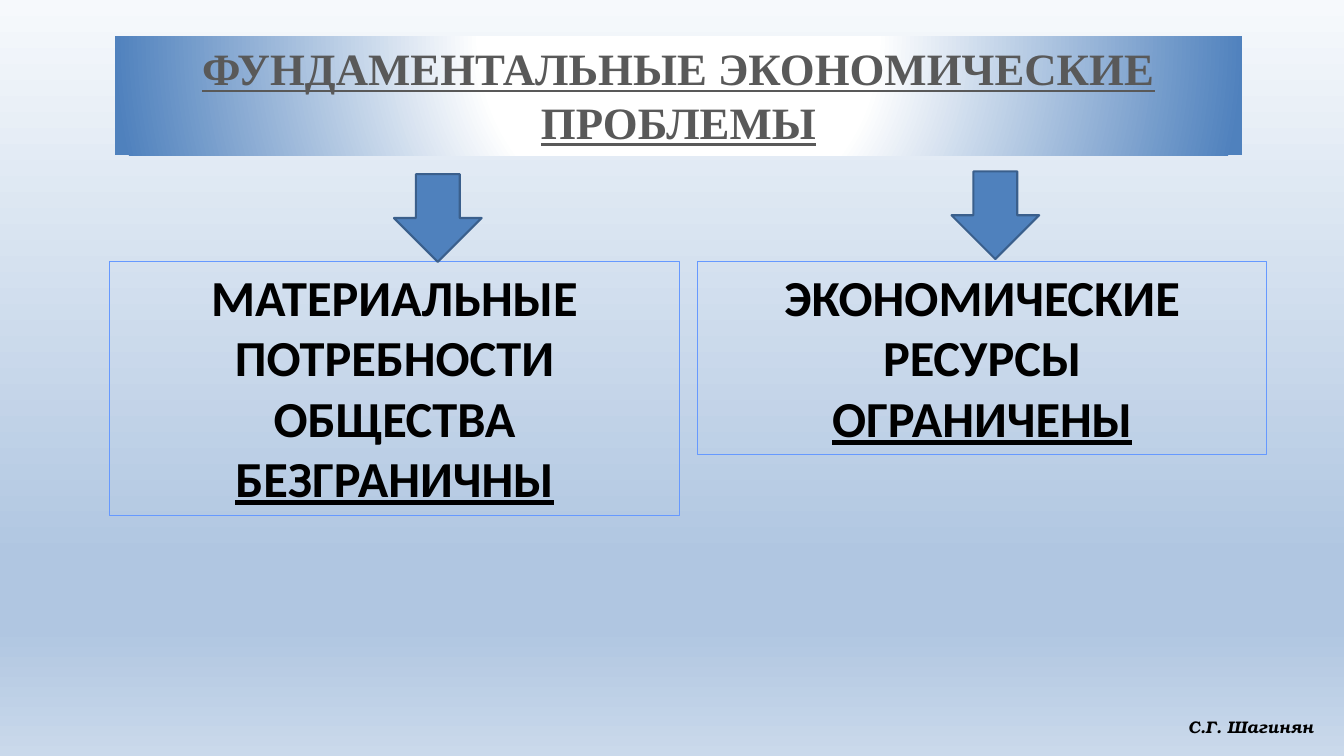
from pptx import Presentation
from pptx.dml.color import RGBColor
from pptx.enum.shapes import MSO_SHAPE
from pptx.enum.text import MSO_ANCHOR, MSO_AUTO_SIZE, PP_ALIGN
from pptx.oxml import parse_xml
from pptx.oxml.ns import nsdecls
from pptx.util import Cm, Pt

RECT, DOWN_ARROW = MSO_SHAPE.RECTANGLE, MSO_SHAPE.DOWN_ARROW
TOP, LEFT, CENTER = MSO_ANCHOR.TOP, PP_ALIGN.LEFT, PP_ALIGN.CENTER
GROW = MSO_AUTO_SIZE.SHAPE_TO_FIT_TEXT

BLACK = RGBColor(0x00, 0x00, 0x00)
GREY = RGBColor(0x59, 0x59, 0x59)
WHITE = RGBColor(0xFF, 0xFF, 0xFF)
BLUE = RGBColor(0x4F, 0x81, 0xBD)
DARK_BLUE = RGBColor(0x3A, 0x5F, 0x8C)
BOX_BLUE = RGBColor(0x66, 0x99, 0xFF)
SKY_TOP = RGBColor(0xF6, 0xF9, 0xFC)
SKY_MID = RGBColor(0xB0, 0xC6, 0xE1)
SKY_END = RGBColor(0xCA, 0xD9, 0xEB)

VERTICAL = '<a:lin ang="5400000" scaled="0"/>'
RADIAL = ('<a:path path="circle"><a:fillToRect l="50000" t="-80000" '
          'r="50000" b="180000"/></a:path>')


def fill_gradient(fill, element, stops, direction):
    """Fill with (percent, colour) stops; element is the XML that holds the fill."""
    fill.gradient()
    old = element.xpath(".//a:gradFill")[0]
    gs = "".join(f'<a:gs pos="{pos * 1000}"><a:srgbClr val="{color}"/></a:gs>'
                 for pos, color in stops)
    old.getparent().replace(old, parse_xml(
        f'<a:gradFill {nsdecls("a")} rotWithShape="1">'
        f'<a:gsLst>{gs}</a:gsLst>{direction}</a:gradFill>'))


def add_shape(s, kind, x, y, w, h, fill=None, line=None, line_width=0.75):
    sp = s.shapes.add_shape(kind, Cm(x), Cm(y), Cm(w), Cm(h))
    sp.shadow.inherit = False
    if fill is None:
        sp.fill.background()
    else:
        sp.fill.solid()
        sp.fill.fore_color.rgb = fill
    if line is None:
        sp.line.fill.background()
    else:
        sp.line.color.rgb = line
        sp.line.width = Pt(line_width)
    return sp


def add_text(sp, text, size, font="Calibri", color=BLACK, align=CENTER,
             italic=False, underlined=(), wrap=True):
    """Write one paragraph per line; underlined lists the lines to underline."""
    tf = sp.text_frame
    tf.word_wrap = wrap
    tf.auto_size = GROW
    tf.vertical_anchor = TOP
    for i, line in enumerate(text.split("\n")):
        p = tf.paragraphs[0] if i == 0 else tf.add_paragraph()
        p.alignment = align
        r = p.add_run()
        r.text = line
        r.font.name = font
        r.font.size = Pt(size)
        r.font.bold = True
        r.font.italic = italic
        r.font.underline = i in underlined
        r.font.color.rgb = color


def add_title(s):
    sp = add_shape(s, RECT, 2.9, 0.91, 28.4, 3)
    fill_gradient(sp.fill, sp.element, [(0, WHITE), (35, WHITE), (100, BLUE)], RADIAL)
    add_text(sp, "ФУНДАМЕНТАЛЬНЫЕ ЭКОНОМИЧЕСКИЕ ПРОБЛЕМЫ", 32,
             font="Times New Roman", color=GREY, underlined=[0])


def add_author(s):
    sp = s.shapes.add_textbox(Cm(29.69), Cm(17.93), Cm(3.8), Cm(0.76))
    add_text(sp, "С.Г. Шагинян", 12, font="TeX Gyre Bonum", align=LEFT,
             italic=True, wrap=False)


def add_problem(s, text, x, height, arrow_x, arrow_y):
    box = add_shape(s, RECT, x, 6.58, 14.35, height, line=BOX_BLUE)
    add_text(box, text, 36, underlined=[1])
    add_shape(s, DOWN_ARROW, arrow_x, arrow_y, 2.21, 2.21, BLUE, DARK_BLUE, 1.5)


def main():
    prs = Presentation()
    prs.slide_width, prs.slide_height = Cm(33.87), Cm(19.05)
    s = prs.slides.add_slide(prs.slide_layouts[6])
    fill_gradient(s.background.fill, s.element,
                  [(0, SKY_TOP), (74, SKY_MID), (83, SKY_MID), (100, SKY_END)], VERTICAL)
    add_title(s)
    add_author(s)
    add_problem(s, "МАТЕРИАЛЬНЫЕ ПОТРЕБНОСТИ ОБЩЕСТВА\nБЕЗГРАНИЧНЫ",
                2.77, 6.4, 9.93, 4.39)
    add_problem(s, "ЭКОНОМИЧЕСКИЕ РЕСУРСЫ\nОГРАНИЧЕНЫ",
                17.58, 4.88, 23.98, 4.32)
    prs.save("out.pptx")


if __name__ == "__main__":
    main()
